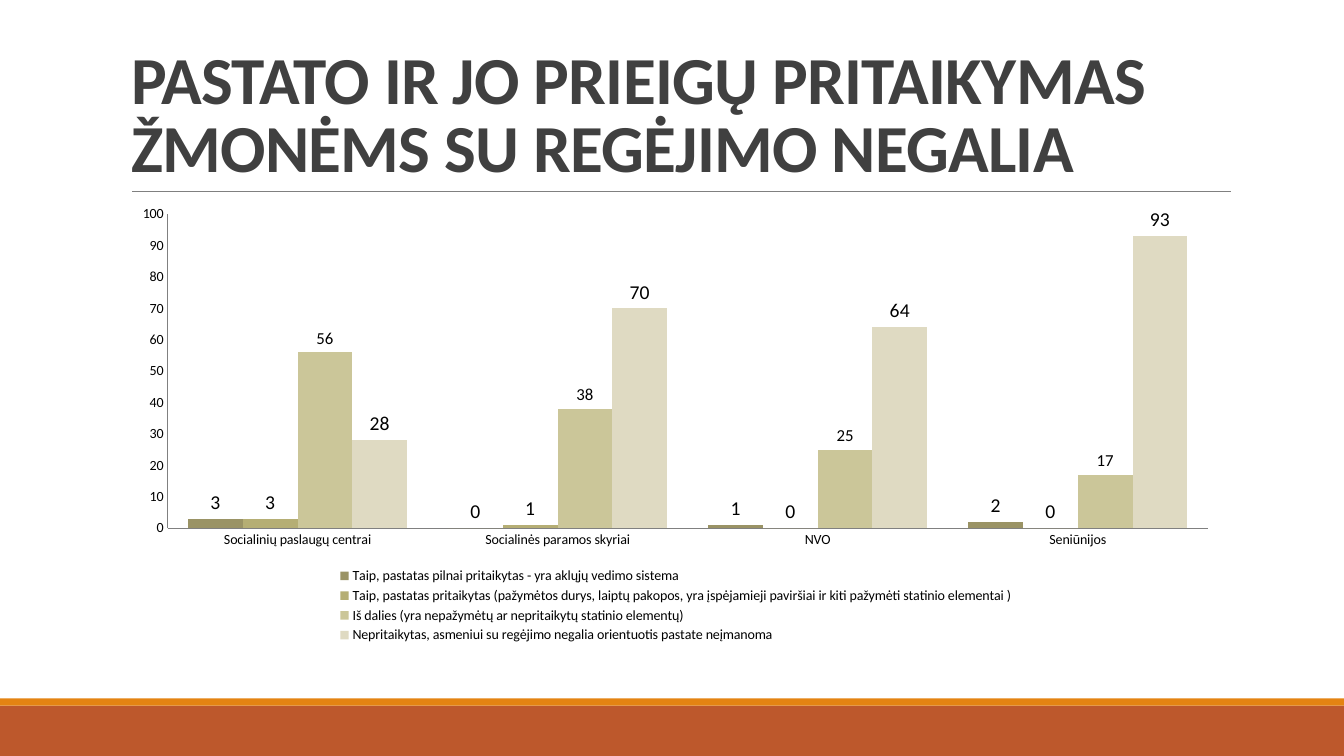
from lxml import etree
from pptx import Presentation
from pptx.chart.data import CategoryChartData
from pptx.dml.color import RGBColor
from pptx.enum.chart import XL_CHART_TYPE, XL_LABEL_POSITION, XL_LEGEND_POSITION, XL_TICK_MARK
from pptx.enum.shapes import MSO_CONNECTOR, MSO_SHAPE
from pptx.enum.text import MSO_ANCHOR, MSO_AUTO_SIZE, PP_ALIGN
from pptx.oxml.ns import qn
from pptx.util import Inches, Pt

COLUMNS = XL_CHART_TYPE.COLUMN_CLUSTERED
OUTSIDE_END = XL_LABEL_POSITION.OUTSIDE_END
BOTTOM = XL_LEGEND_POSITION.BOTTOM
NO_TICK = XL_TICK_MARK.NONE
WIDTH, HEIGHT = 13.33, 7.5
LEFT, CONTENT_WIDTH = 1.2, 11
FONT = "Calibri"
GREY = "808080"


def color(hex_string):
    return RGBColor.from_string(hex_string)


def format_font(font, size, hex_string="000000", bold=False):
    font.name, font.size, font.bold = FONT, Pt(size), bold
    font.color.rgb = color(hex_string)


presentation = Presentation()
presentation.slide_width, presentation.slide_height = Inches(WIDTH), Inches(HEIGHT)
slide = presentation.slides.add_slide(presentation.slide_layouts[5])

# Footer bands and the rule below the title
for top, height, fill in [(7, 0.5, "BD582C"), (6.93, 0.07, "E48312")]:
    band = slide.shapes.add_shape(MSO_SHAPE.RECTANGLE, 0, Inches(top), Inches(WIDTH), Inches(height))
    band.shadow.inherit = False
    band.fill.solid()
    band.fill.fore_color.rgb = color(fill)
    band.line.fill.background()

rule = slide.shapes.add_connector(
    MSO_CONNECTOR.STRAIGHT, Inches(1.31), Inches(1.9), Inches(12.21), Inches(1.9))
rule.line.color.rgb = color(GREY)
rule.line.width = Pt(0.5)
etree.SubElement(rule._element.spPr, qn("a:effectLst"))

# Title
title = slide.shapes.title
title.left, title.top = Inches(LEFT), Inches(0.31)
title.width, title.height = Inches(CONTENT_WIDTH), Inches(1.59)
frame = title.text_frame
frame.word_wrap = True
frame.auto_size = MSO_AUTO_SIZE.NONE
frame.vertical_anchor = MSO_ANCHOR.BOTTOM
paragraph = frame.paragraphs[0]
paragraph.alignment = PP_ALIGN.LEFT
paragraph.line_spacing = 0.85
run = paragraph.add_run()
run.text = "PASTATO IR JO PRIEIGŲ PRITAIKYMAS ŽMONĖMS SU REGĖJIMO NEGALIA"
format_font(run.font, 48, "404040", bold=True)
run.font._element.set("spc", "-50")

# Chart: name, values, colour, label size
answers = [
    ("Taip, pastatas pilnai pritaikytas - yra aklųjų vedimo sistema",
     (3, 0, 1, 2), "9A9365", 14),
    ("Taip, pastatas pritaikytas (pažymėtos durys, laiptų pakopos, yra įspėjamieji "
     "paviršiai ir kiti pažymėti statinio elementai )",
     (3, 1, 0, 0), "B5AE74", 14),
    ("Iš dalies (yra nepažymėtų ar nepritaikytų statinio elementų)",
     (56, 38, 25, 17), "CBC699", 12),
    ("Nepritaikytas, asmeniui su regėjimo negalia orientuotis pastate neįmanoma",
     (28, 70, 64, 93), "DFDAC2", 14),
]
chart_data = CategoryChartData()
chart_data.categories = [
    "Socialinių paslaugų centrai", "Socialinės paramos skyriai", "NVO", "Seniūnijos"]
for name, values, _, _ in answers:
    chart_data.add_series(name, values)

chart = slide.shapes.add_chart(
    COLUMNS, Inches(LEFT), Inches(1.95), Inches(CONTENT_WIDTH), Inches(4.47), chart_data).chart
format_font(chart.font, 10)
chart.has_title = False
chart.has_legend = True
chart.legend.position = BOTTOM
chart.legend.include_in_layout = False
format_font(chart.legend.font, 10)

plot = chart.plots[0]
plot.gap_width, plot.overlap = 75, 0
plot.vary_by_categories = False
for series, (_, _, fill, label_size) in zip(plot.series, answers):
    series.format.fill.solid()
    series.format.fill.fore_color.rgb = color(fill)
    labels = series.data_labels
    labels.show_value = True
    labels.position = OUTSIDE_END
    format_font(labels.font, label_size)

for axis in (chart.category_axis, chart.value_axis):
    axis.major_tick_mark = axis.minor_tick_mark = NO_TICK
    axis.has_major_gridlines = False
    axis.format.line.color.rgb = color(GREY)
    axis.format.line.width = Pt(0.75)
    format_font(axis.tick_labels.font, 10)
chart.value_axis.minimum_scale, chart.value_axis.maximum_scale = 0, 100
chart.value_axis.major_unit = 10

# Plot area as shares of the chart
plot_area = chart._chartSpace.chart.plotArea
for old_layout in plot_area.findall(qn("c:layout")):
    plot_area.remove(old_layout)
layout = etree.Element(qn("c:layout"))
manual = etree.SubElement(layout, qn("c:manualLayout"))
for tag, value in [("layoutTarget", "inner"), ("xMode", "edge"), ("yMode", "edge"),
                   ("x", "0.042"), ("y", "0.039"), ("w", "0.938"), ("h", "0.697")]:
    etree.SubElement(manual, qn(f"c:{tag}")).set("val", value)
plot_area.insert(0, layout)

presentation.save("out.pptx")
